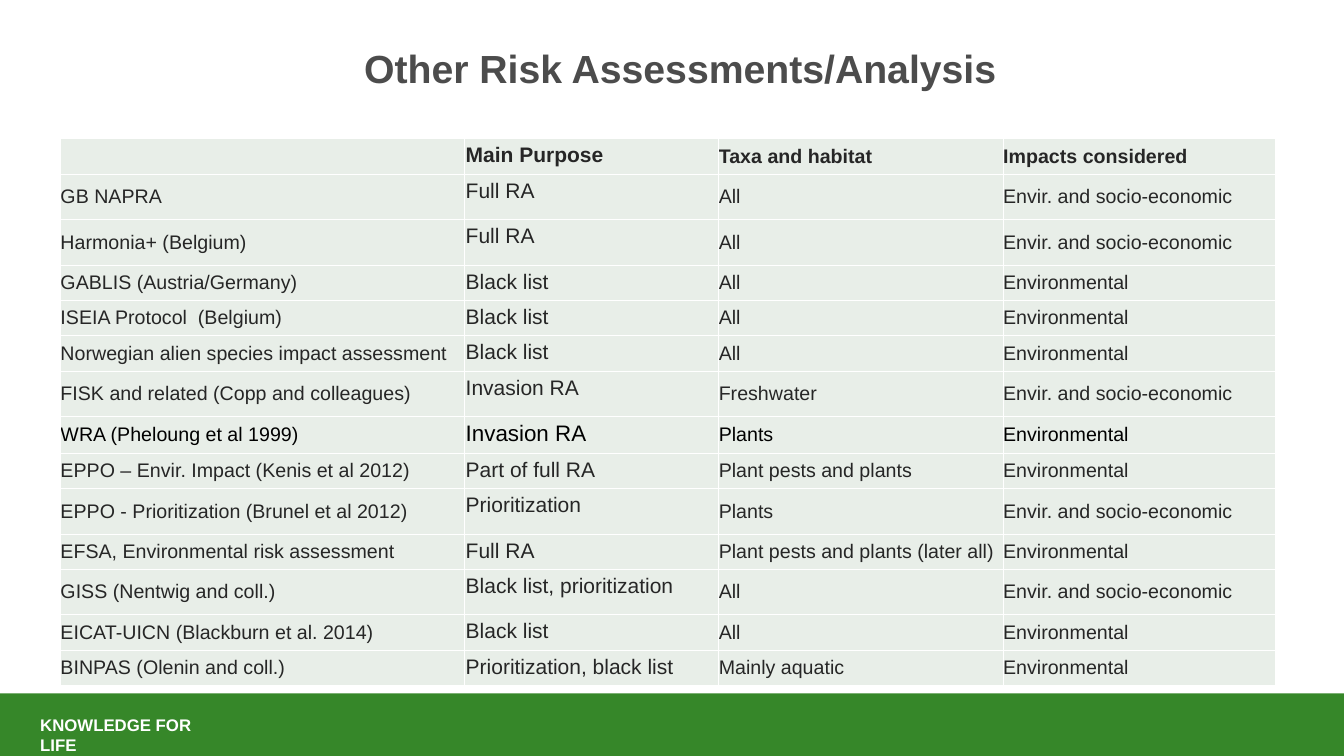
from pptx import Presentation
from pptx.dml.color import RGBColor
from pptx.enum.shapes import MSO_SHAPE
from pptx.enum.text import MSO_ANCHOR, PP_ALIGN
from pptx.oxml import parse_xml
from pptx.oxml.ns import nsdecls
from pptx.util import Inches, Pt

WHITE = RGBColor(0xFF, 0xFF, 0xFF)
BLACK = RGBColor(0x00, 0x00, 0x00)
GREEN = RGBColor(0x36, 0x87, 0x29)
PALE_GREEN = RGBColor(0xE8, 0xEE, 0xE8)
TITLE_GRAY = RGBColor(0x4C, 0x4C, 0x4C)
TEXT_GRAY = RGBColor(0x26, 0x26, 0x26)

SLIDE_WIDTH, SLIDE_HEIGHT = Inches(13.33), Inches(7.5)

# Table measures, in percent of the slide's width or height
COLUMN_WIDTHS = (30.08, 18.9, 21.16, 20.26)
HEADER_HEIGHT, SHORT_ROW, TALL_ROW = 4.8, 4.53, 6
PURPOSE_COLUMN = 1

ENVIRONMENT = "Environmental"
BOTH_IMPACTS = "Envir. and socio-economic"
HIGHLIGHTED = "WRA (Pheloung et al 1999)"

HEADER = ("", "Main Purpose", "Taxa and habitat", "Impacts considered")
ASSESSMENTS = (
    ("GB NAPRA", "Full RA", "All", BOTH_IMPACTS),
    ("Harmonia+ (Belgium)", "Full RA", "All", BOTH_IMPACTS),
    ("GABLIS (Austria/Germany)", "Black list", "All", ENVIRONMENT),
    ("ISEIA Protocol  (Belgium)", "Black list", "All", ENVIRONMENT),
    ("Norwegian alien species impact assessment", "Black list", "All", ENVIRONMENT),
    ("FISK and related (Copp and colleagues)", "Invasion RA", "Freshwater", BOTH_IMPACTS),
    (HIGHLIGHTED, "Invasion RA", "Plants", ENVIRONMENT),
    ("EPPO – Envir. Impact (Kenis et al 2012)", "Part of full RA",
     "Plant pests and plants", ENVIRONMENT),
    ("EPPO - Prioritization (Brunel et al 2012)", "Prioritization", "Plants", BOTH_IMPACTS),
    ("EFSA, Environmental risk assessment", "Full RA",
     "Plant pests and plants (later all)", ENVIRONMENT),
    ("GISS (Nentwig and coll.)", "Black list, prioritization", "All", BOTH_IMPACTS),
    ("EICAT-UICN (Blackburn et al. 2014)", "Black list", "All", ENVIRONMENT),
    ("BINPAS (Olenin and coll.)", "Prioritization, black list", "Mainly aquatic", ENVIRONMENT),
)


def across(percent):
    return round(SLIDE_WIDTH * percent / 100)


def down(percent):
    return round(SLIDE_HEIGHT * percent / 100)


def place(left, top, width, height):
    return across(left), down(top), across(width), down(height)


def apply_format(target, values):
    for name, value in values.items():
        setattr(target, name, value)


def write(paragraph, text, size, color, bold):
    run = paragraph.add_run()
    run.text = text
    apply_format(run.font, {"name": "Arial", "size": Pt(size), "bold": bold})
    run.font.color.rgb = color


def add_band(slide, position, color):
    band = slide.shapes.add_shape(MSO_SHAPE.RECTANGLE, *position)
    band.shadow.inherit = False
    band.fill.solid()
    band.fill.fore_color.rgb = color
    band.line.fill.background()


def add_text(slide, position, text, size, color, frame_format, paragraph_format):
    frame = slide.shapes.add_textbox(*position).text_frame
    apply_format(frame, {"word_wrap": True, **frame_format})
    paragraph = frame.paragraphs[0]
    apply_format(paragraph, paragraph_format)
    write(paragraph, text, size, color, True)


def add_borders(cell):
    properties = cell._tc.get_or_add_tcPr()
    for index, side in enumerate(("lnL", "lnR", "lnT", "lnB")):
        border = parse_xml(
            f'<a:{side} {nsdecls("a")} w="{Pt(0.5)}"><a:solidFill>'
            f'<a:srgbClr val="{WHITE}"/></a:solidFill></a:{side}>')
        properties.insert(index, border)


def fill_cell(cell, text, column, is_header, is_highlighted):
    is_purpose = column == PURPOSE_COLUMN
    side, edge = (Inches(0.01), Inches(0.05)) if is_purpose else (0, 0)
    apply_format(cell, {
        "margin_left": side, "margin_right": side,
        "margin_top": edge, "margin_bottom": edge,
        "vertical_anchor": MSO_ANCHOR.TOP if is_purpose else MSO_ANCHOR.MIDDLE,
    })
    cell.fill.solid()
    cell.fill.fore_color.rgb = PALE_GREEN
    add_borders(cell)
    if text:
        size = (16 if is_highlighted else 15) if is_purpose else 14
        color = BLACK if is_highlighted else TEXT_GRAY
        write(cell.text_frame.paragraphs[0], text, size, color, is_header)


def add_assessment_table(slide, left, top):
    rows = (HEADER,) + ASSESSMENTS
    heights = [HEADER_HEIGHT] + [
        TALL_ROW if row[-1] == BOTH_IMPACTS else SHORT_ROW for row in ASSESSMENTS]
    position = place(left, top, sum(COLUMN_WIDTHS), sum(heights))
    table = slide.shapes.add_table(len(rows), len(HEADER), *position).table
    apply_format(table, {"first_row": False, "horz_banding": False})
    for column, width in zip(table.columns, COLUMN_WIDTHS):
        column.width = across(width)
    for row_index, (row, height) in enumerate(zip(rows, heights)):
        table.rows[row_index].height = down(height)
        for column_index, text in enumerate(row):
            fill_cell(table.cell(row_index, column_index), text, column_index,
                      row_index == 0, row[0] == HIGHLIGHTED)


def main():
    presentation = Presentation()
    apply_format(presentation, {"slide_width": SLIDE_WIDTH, "slide_height": SLIDE_HEIGHT})
    slide = presentation.slides.add_slide(presentation.slide_layouts[6])

    # Footer band and slogan
    add_band(slide, place(0, 91.7, 100, 8.3), GREEN)
    add_text(slide, place(2.25, 93.87, 13.2, 4), "KNOWLEDGE FOR LIFE", 12, WHITE,
             {}, {"space_after": Pt(3)})

    # Title
    add_text(slide, place(10.43, 4.67, 80.35, 16.67), "Other Risk Assessments/Analysis",
             28, TITLE_GRAY, {"margin_top": Inches(0.09)}, {"alignment": PP_ALIGN.CENTER})

    # Comparison of the assessments
    add_assessment_table(slide, 4.5, 18.27)

    presentation.save("out.pptx")


if __name__ == "__main__":
    main()
